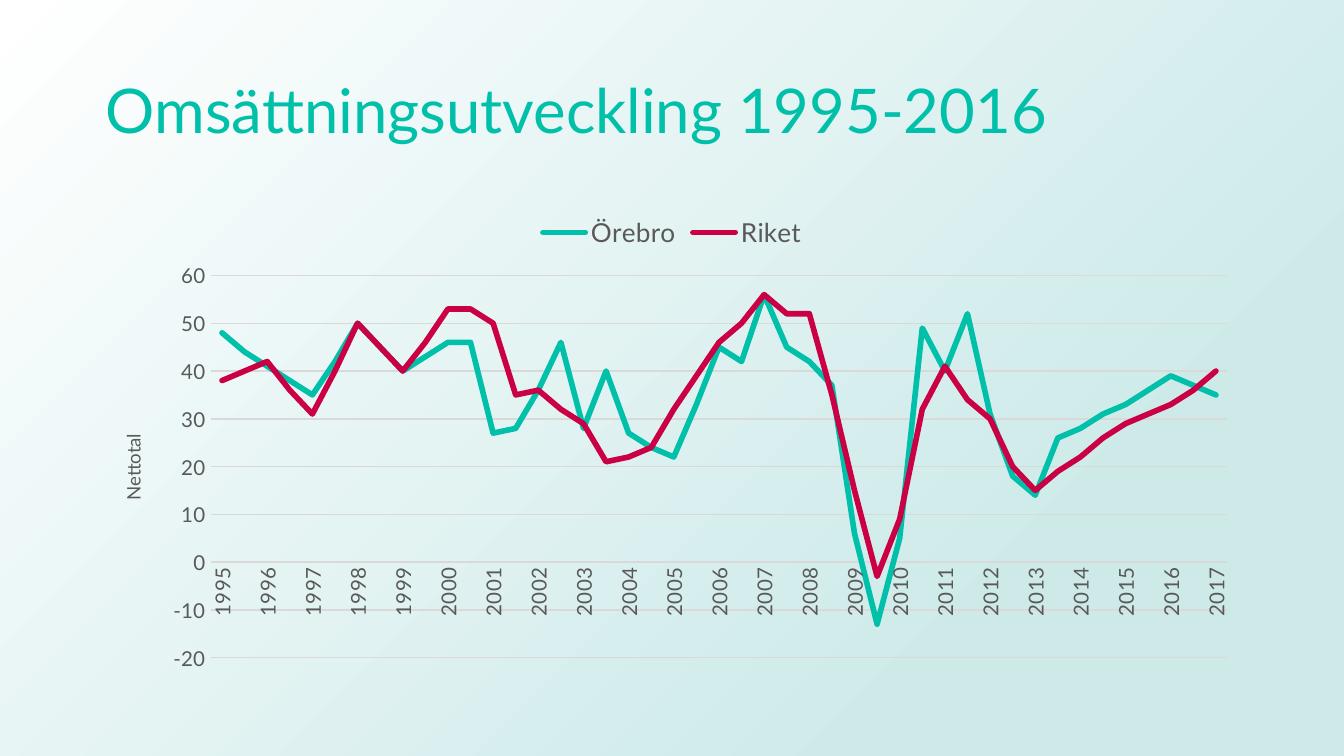
import pptx
import pptx.chart.data
import pptx.dml.color
import pptx.enum.chart
import pptx.enum.shapes
import pptx.enum.text
import pptx.oxml
import pptx.oxml.ns
import pptx.util

W = 10
H = W * 9 / 16
TEAL, RED, GREY, GRID = "00C0A9", "CB0044", "595959", "D9D9D9"
FONT = "Lato"

# One value per half year, from 1995 to 2017
YEARS = [str(1995 + i // 2) for i in range(45)]
SERIES = {
    "Örebro": (TEAL, [
        48, 44, 41, 38, 35, 42, 50, 45, 40, 43, 46, 46, 27, 28, 36,
        46, 28, 40, 27, 24, 22, 33, 45, 42, 56, 45, 42, 37, 6, -13,
        5, 49, 40, 52, 31, 18, 14, 26, 28, 31, 33, 36, 39, 37, 35]),
    "Riket": (RED, [
        38, 40, 42, 36, 31, 40, 50, 45, 40, 46, 53, 53, 50, 35, 36,
        32, 29, 21, 22, 24, 32, 39, 46, 50, 56, 52, 52, 35, 15, -3,
        9, 32, 41, 34, 30, 20, 15, 19, 22, 26, 29, 31, 33, 36, 40]),
}


def rgb(value):
    return pptx.dml.color.RGBColor.from_string(value)


def share(x, y, w, h):
    """Box in EMU from percentages of the slide's size."""
    return [pptx.util.Inches(v / 100) for v in (x * W, y * H, w * W, h * H)]


def xml(tag, inner="", attrs=""):
    ns = pptx.oxml.ns.nsdecls("a", "c")
    return pptx.oxml.parse_xml(f"<{tag} {ns} {attrs}>{inner}</{tag}>")


def style_font(font, size, color=GREY):
    font.name, font.size, font.bold = FONT, pptx.util.Pt(size), False
    font.color.rgb = rgb(color)


def style_line(line, color, width):
    line.color.rgb = rgb(color)
    line.width = pptx.util.Pt(width)


def place_layout(parent, index, **parts):
    """Give a chart part a manual place, in percentages of the chart."""
    for old in parent.xpath("./c:layout"):
        parent.remove(old)
    inner = '<c:layoutTarget val="inner"/>' if "w" in parts else ""
    inner += '<c:xMode val="edge"/><c:yMode val="edge"/>'
    inner += "".join(f'<c:{k} val="{v / 100:.4f}"/>' for k, v in parts.items())
    parent.insert(index, xml("c:layout", f"<c:manualLayout>{inner}</c:manualLayout>"))


def add_background(s, box):
    sp = s.shapes.add_shape(pptx.enum.shapes.MSO_SHAPE.RECTANGLE, *box)
    sp.shadow.inherit = False
    sp.line.fill.background()
    sp.fill.gradient()
    for stop, (pos, color) in zip(sp.fill.gradient_stops, [(0.23, "CDEAE9"), (1, "FFFFFF")]):
        stop.position, stop.color.rgb = pos, rgb(color)
    # Radial spread from the bottom right corner
    lin = sp.element.xpath(".//a:gradFill/a:lin")[0]
    lin.getparent().replace(
        lin, xml("a:path", '<a:fillToRect l="100000" t="100000"/>', 'path="circle"'))
    s.shapes.title.element.addprevious(sp.element)


def add_title(s, box, text):
    sp = s.shapes.title
    sp.left, sp.top, sp.width, sp.height = box
    tf = sp.text_frame
    tf.word_wrap = True
    tf.auto_size = pptx.enum.text.MSO_AUTO_SIZE.NONE
    tf.vertical_anchor = pptx.enum.text.MSO_ANCHOR.MIDDLE
    p = tf.paragraphs[0]
    p.alignment = pptx.enum.text.PP_ALIGN.LEFT
    p.line_spacing = 0.9
    r = p.add_run()
    r.text = text
    style_font(r.font, 33, TEAL)


def add_line_chart(s, box):
    data = pptx.chart.data.CategoryChartData(number_format="0")
    data.categories = YEARS
    for name, (_, values) in SERIES.items():
        data.add_series(name, values)
    chart = s.shapes.add_chart(pptx.enum.chart.XL_CHART_TYPE.LINE, *box, data).chart
    chart.has_title = False
    chart.font.name, chart.font.size = "Calibri", pptx.util.Pt(10)
    chart.font.color.rgb = rgb("000000")
    root = chart.element

    # Series
    plot = chart.plots[0]
    plot.vary_by_categories = False
    for series in plot.series:
        series.smooth = False
        style_line(series.format.line, SERIES[series.name][0], 3)
    for ln in root.xpath(".//c:ser/c:spPr/a:ln"):
        ln.set("cap", "rnd")

    # Legend
    chart.has_legend = True
    chart.legend.position = pptx.enum.chart.XL_LEGEND_POSITION.TOP
    chart.legend.include_in_layout = False
    style_font(chart.legend.font, 14)

    # Axes
    cat, val = chart.category_axis, chart.value_axis
    for axis in (cat, val):
        axis.major_tick_mark = axis.minor_tick_mark = pptx.enum.chart.XL_TICK_MARK.NONE
        style_font(axis.tick_labels.font, 11)
    style_line(cat.format.line, GRID, 0.75)
    val.format.line.fill.background()
    val.has_major_gridlines = True
    style_line(val.major_gridlines.format.line, GRID, 0.75)
    val.minimum_scale, val.maximum_scale, val.major_unit = -20, 60, 10
    val.tick_labels.number_format = "0"
    val.tick_labels.number_format_is_linked = False

    # One label per year
    last = root.xpath(".//c:catAx/c:noMultiLvlLbl")[0]
    last.addprevious(xml("c:tickLblSkip", attrs='val="2"'))

    # Value axis title
    val.has_title = True
    r = val.axis_title.text_frame.paragraphs[0].add_run()
    r.text = "Nettotal"
    style_font(r.font, 10)

    # Upright text and fixed places
    for body in root.xpath(".//c:catAx/c:txPr/a:bodyPr | .//c:valAx/c:title//a:bodyPr"):
        body.set("rot", "-5400000")
        body.set("vert", "horz")
    place_layout(root.xpath(".//c:valAx/c:title")[0], 1, x=2.1, y=47.8)
    place_layout(root.xpath(".//c:plotArea")[0], 0, x=10.2, y=15.5, w=87.7, h=79.7)


def main():
    prs = pptx.Presentation()
    prs.slide_width, prs.slide_height = pptx.util.Inches(W), pptx.util.Inches(H)
    s = prs.slides.add_slide(prs.slide_layouts[5])
    add_background(s, share(0, 0, 100, 100))
    add_title(s, share(6.88, 5.32, 86.25, 19.33), "Omsättningsutveckling 1995-2016")
    add_line_chart(s, share(6.88, 26.62, 86.25, 63.45))
    prs.save("out.pptx")


if __name__ == "__main__":
    main()
